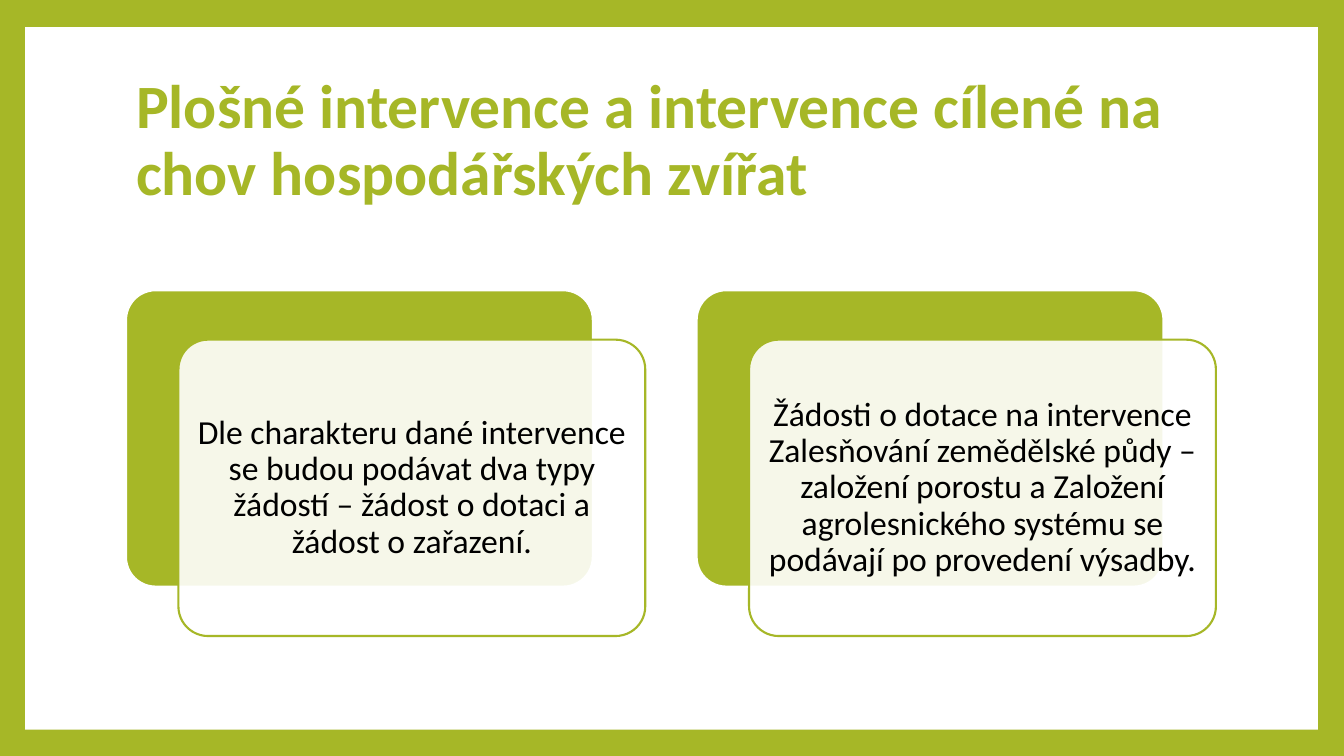
from lxml import etree
from pptx import Presentation
from pptx.dml.color import RGBColor
from pptx.enum import shapes, text
from pptx.oxml.ns import qn
from pptx.util import Inches, Pt

GREEN = RGBColor(0xA6, 0xB7, 0x27)
WHITE = RGBColor(0xFF, 0xFF, 0xFF)
BLACK = RGBColor(0x00, 0x00, 0x00)
FONT = "Calibri"

TITLE = "Plošné intervence a intervence cílené na chov hospodářských zvířat"
CARDS = [
    "Dle charakteru dané intervence se budou podávat dva typy žádostí – "
    "žádost o dotaci a žádost o zařazení.",
    "Žádosti o dotace na intervence Zalesňování zemědělské půdy – založení "
    "porostu a Založení agrolesnického systému se podávají po provedení výsadby.",
]
CARD_W, CARD_H = 4.63, 2.94
CARD_PITCH = 5.66
OFFSET_X, OFFSET_Y = 0.52, 0.49
TEXT_INSET = 0.085


def inches(*box):
    return [Inches(v) for v in box]


def add_background(s, x, y, w, h):
    """Green slide with a white panel behind everything else."""
    s.background.fill.solid()
    s.background.fill.fore_color.rgb = GREEN
    sp = s.shapes.add_shape(shapes.MSO_SHAPE.RECTANGLE, *inches(x, y, w, h))
    sp.shadow.inherit = False
    sp.fill.solid()
    sp.fill.fore_color.rgb = WHITE
    sp.line.fill.background()
    s.shapes._spTree.insert(2, sp._element)


def format_text(tf, content, size, color, align, bold=False):
    tf.word_wrap = True
    tf.auto_size = text.MSO_AUTO_SIZE.NONE
    tf.vertical_anchor = text.MSO_ANCHOR.MIDDLE
    p = tf.paragraphs[0]
    p.text = content
    p.alignment = align
    p.line_spacing = 0.9
    p.font.name = FONT
    p.font.size = Pt(size)
    p.font.bold = bold
    p.font.color.rgb = color


def add_title(s, x, y, w, h):
    sp = s.shapes.title
    sp.left, sp.top, sp.width, sp.height = inches(x, y, w, h)
    format_text(sp.text_frame, TITLE, 44, GREEN, text.PP_ALIGN.LEFT, bold=True)


def add_panel(s, x, y, fill, line):
    sp = s.shapes.add_shape(shapes.MSO_SHAPE.ROUNDED_RECTANGLE,
                            *inches(x, y, CARD_W, CARD_H))
    sp.adjustments[0] = 0.1
    sp.shadow.inherit = False
    sp.fill.solid()
    sp.fill.fore_color.rgb = fill
    sp.line.color.rgb = line
    sp.line.width = Pt(1.5)
    return sp


def add_card(s, x, y, content):
    """Green panel, translucent white panel shifted over it, and its text."""
    add_panel(s, x, y, GREEN, WHITE)
    x, y = x + OFFSET_X, y + OFFSET_Y
    front = add_panel(s, x, y, WHITE, GREEN)
    color = front._element.spPr.find(qn("a:solidFill"))[0]
    etree.SubElement(color, qn("a:alpha"), val="90000")

    tb = s.shapes.add_textbox(*inches(x + TEXT_INSET, y + TEXT_INSET,
                                      CARD_W - 2 * TEXT_INSET,
                                      CARD_H - 2 * TEXT_INSET))
    tf = tb.text_frame
    tf.margin_left = tf.margin_right = Inches(0.1)
    tf.margin_top = tf.margin_bottom = Inches(0.1)
    format_text(tf, content, 24, BLACK, text.PP_ALIGN.CENTER)


def main():
    prs = Presentation()
    prs.slide_width, prs.slide_height = inches(13.33, 7.5)
    s = prs.slides.add_slide(prs.slide_layouts[5])
    add_background(s, 0.25, 0.27, 12.82, 6.97)
    add_title(s, 1.25, 0.67, 10.8, 1.48)
    for i, content in enumerate(CARDS):
        add_card(s, 1.25 + i * CARD_PITCH, 2.88, content)
    prs.save("out.pptx")


if __name__ == "__main__":
    main()
